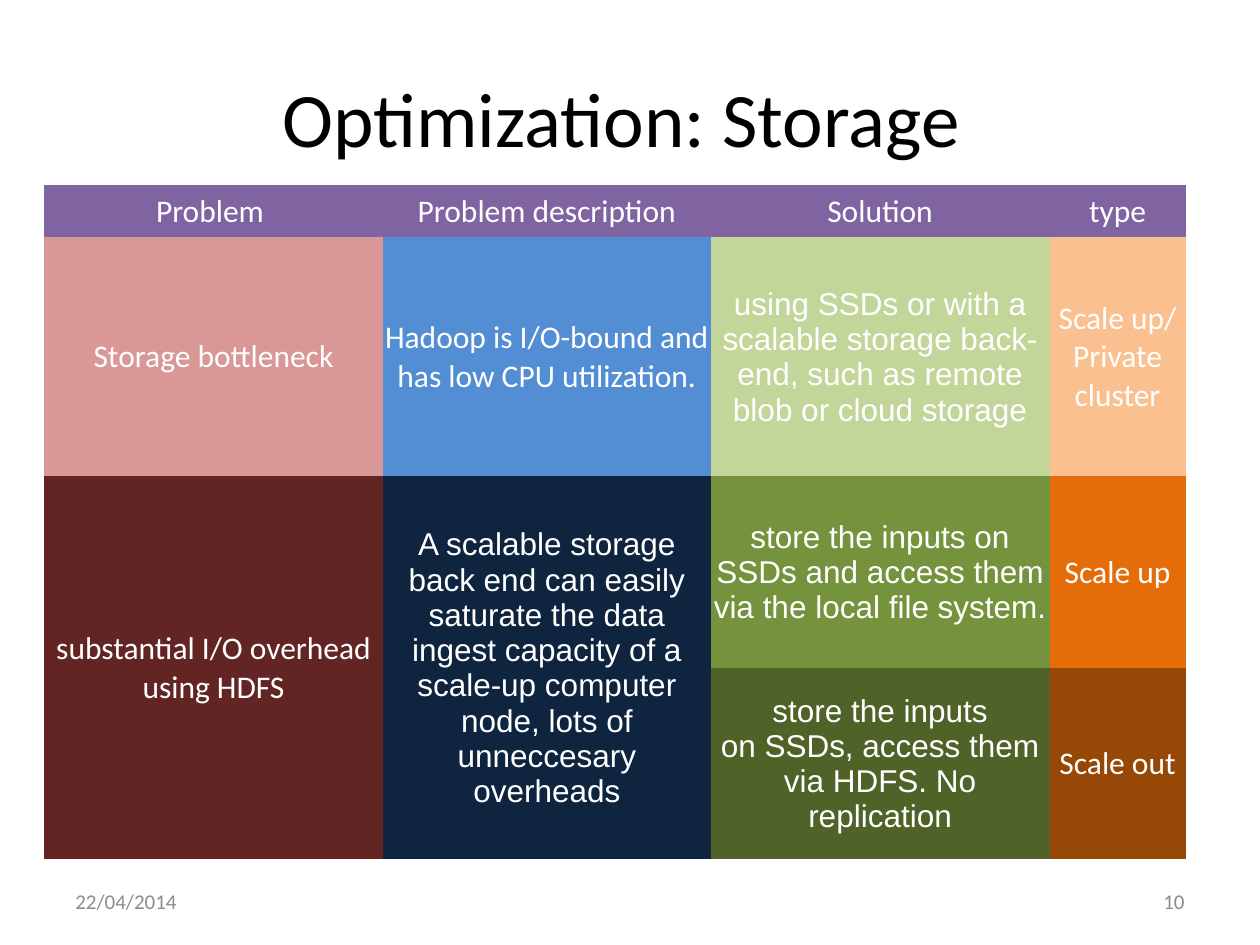
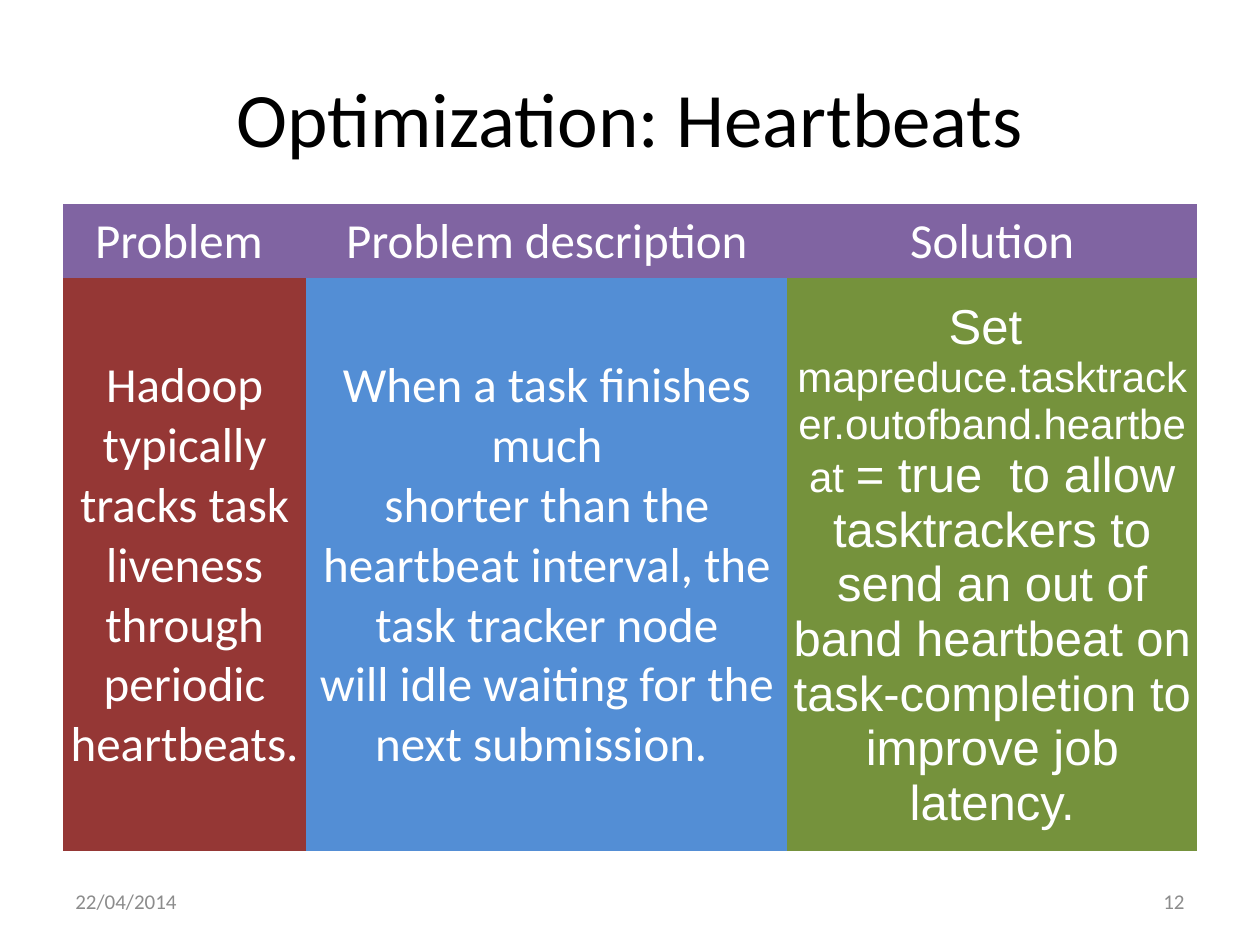
"""Build two slides of tables about Hadoop optimization."""
from dataclasses import dataclass

from pptx import Presentation
from pptx.dml.color import RGBColor
from pptx.enum.text import MSO_ANCHOR, PP_ALIGN
from pptx.util import Inches, Pt

BLACK = RGBColor(0x00, 0x00, 0x00)
WHITE = RGBColor(0xFF, 0xFF, 0xFF)
GREY = RGBColor(0x8C, 0x8C, 0x8C)
PURPLE = RGBColor(0x80, 0x64, 0xA2)
PALE_RED = RGBColor(0xD9, 0x97, 0x95)
RED = RGBColor(0x95, 0x37, 0x35)
DARK_RED = RGBColor(0x63, 0x25, 0x23)
BLUE = RGBColor(0x53, 0x8E, 0xD5)
NAVY = RGBColor(0x0F, 0x25, 0x3F)
PALE_GREEN = RGBColor(0xC2, 0xD6, 0x9A)
GREEN = RGBColor(0x75, 0x92, 0x3C)
DARK_GREEN = RGBColor(0x4F, 0x62, 0x28)
PALE_ORANGE = RGBColor(0xFA, 0xC0, 0x90)
ORANGE = RGBColor(0xE4, 0x6D, 0x0A)
BROWN = RGBColor(0x97, 0x48, 0x06)

BODY_FONT = "Calibri"
ALTERNATE_FONT = "Arial"
PLAIN_TABLE_STYLE = "{2D5ABB26-0587-4C30-8999-92F81FD0307C}"
TITLE_ONLY = 5
DATE = "22/04/2014"


@dataclass
class Entry:
    """Content and look of one table cell; spans are (text, size) pairs."""
    text: str
    fill: RGBColor
    font: str = BODY_FONT
    row_span: int = 1
    spans: tuple = ()


def header(*labels):
    """Return a row of header entries."""
    return [Entry(label, PURPLE) for label in labels]


STORAGE_ROWS = [
    header("Problem ", "Problem description", "Solution", "type"),
    [
        Entry("Storage bottleneck", PALE_RED),
        Entry("Hadoop is I/O-bound and has low CPU utilization.", BLUE),
        Entry("using SSDs or with a scalable storage back-end, such as "
              "remote blob or cloud storage", PALE_GREEN, ALTERNATE_FONT),
        Entry("Scale up/\nPrivate cluster", PALE_ORANGE),
    ],
    [
        Entry("substantial I/O overhead using HDFS", DARK_RED, row_span=2),
        Entry("A scalable storage back end can easily saturate the data ingest "
              "capacity of a scale-up computer node, lots of unneccesary overheads",
              NAVY, ALTERNATE_FONT, row_span=2),
        Entry("store the inputs on SSDs and access them via the local ﬁle system.",
              GREEN, ALTERNATE_FONT),
        Entry("Scale up", ORANGE),
    ],
    [
        None,
        None,
        Entry("store the inputs\von SSDs, access them via HDFS. No replication",
              DARK_GREEN, ALTERNATE_FONT),
        Entry("Scale out", BROWN),
    ],
]

HEARTBEAT_ROWS = [
    header("Problem ", "Problem description", "Solution"),
    [
        Entry("Hadoop typically tracks task liveness\vthrough periodic heartbeats.", RED),
        Entry("When a task ﬁnishes much\vshorter than the heartbeat interval, "
              "the task tracker node\vwill idle waiting for the next submission. ", BLUE),
        Entry("", GREEN, ALTERNATE_FONT, spans=(
            ("Set  ", 28),
            ("mapreduce.tasktracker.outofband.heartbeat ", 24),
            ("= true  to allow tasktrackers to send an out of band heartbeat on "
             "task-completion to improve job latency.", 28),
        )),
    ],
]


def format_paragraph(para, size, color, align, font=BODY_FONT):
    """Set alignment and font of a paragraph."""
    para.alignment = align
    para.font.name = font
    para.font.size = Pt(size)
    para.font.bold = False
    para.font.color.rgb = color


def add_title(page, text):
    """Place and format the title placeholder."""
    title = page.shapes.title
    title.left, title.top = Inches(0.5), Inches(0.3)
    title.width, title.height = Inches(9), Inches(1.25)
    title.text_frame.text = text
    title.text_frame.vertical_anchor = MSO_ANCHOR.MIDDLE
    format_paragraph(title.text_frame.paragraphs[0], 44, BLACK, PP_ALIGN.CENTER)


def add_footer_text(page, left, text, align):
    """Add one small grey text at the foot of the page."""
    box = page.shapes.add_textbox(Inches(left), Inches(6.95), Inches(2.33), Inches(0.4))
    frame = box.text_frame
    frame.word_wrap = True
    frame.vertical_anchor = MSO_ANCHOR.MIDDLE
    frame.text = text
    format_paragraph(frame.paragraphs[0], 12, GREY, align)


def fill_cell(cell, entry, size):
    """Write an entry into a table cell."""
    cell.fill.solid()
    cell.fill.fore_color.rgb = entry.fill
    cell.vertical_anchor = MSO_ANCHOR.MIDDLE
    cell.margin_left = cell.margin_right = cell.margin_top = Inches(0.01)
    cell.margin_bottom = 0
    frame = cell.text_frame
    frame.text = entry.text
    for text, span_size in entry.spans:
        span = frame.paragraphs[0].add_run()
        span.text = text
        span.font.size = Pt(span_size)
    for para in frame.paragraphs:
        format_paragraph(para, size, WHITE, PP_ALIGN.CENTER, entry.font)


def add_grid(page, left, top, widths, heights, rows, size):
    """Add a table of coloured cells."""
    table = page.shapes.add_table(
        len(heights), len(widths), Inches(left), Inches(top),
        Inches(sum(widths)), Inches(sum(heights))).table
    table.first_row = table.horz_banding = False
    table._tbl.tblPr[0].text = PLAIN_TABLE_STYLE
    for column, width in zip(table.columns, widths):
        column.width = Inches(width)
    for row, height in zip(table.rows, heights):
        row.height = Inches(height)
    for row_index, entries in enumerate(rows):
        for column_index, entry in enumerate(entries):
            if entry is None:
                continue
            cell = table.cell(row_index, column_index)
            if entry.row_span > 1:
                cell.merge(table.cell(row_index + entry.row_span - 1, column_index))
            fill_cell(cell, entry, size)


def add_page(deck, title, number):
    """Add a page with its title, date and number."""
    page = deck.slides.add_slide(deck.slide_layouts[TITLE_ONLY])
    add_title(page, title)
    add_footer_text(page, 0.5, DATE, PP_ALIGN.LEFT)
    add_footer_text(page, 7.17, number, PP_ALIGN.RIGHT)
    return page


def main():
    """Build and save the deck."""
    deck = Presentation()
    deck.slide_width, deck.slide_height = Inches(10), Inches(7.5)

    storage = add_page(deck, "Optimization: Storage ", "10")
    add_grid(storage, 0.35, 1.47, [2.69, 2.6, 2.69, 1.08],
             [0.41, 1.9, 1.52, 1.52], STORAGE_ROWS, 18)

    heartbeats = add_page(deck, "Optimization: Heartbeats", "12")
    add_grid(heartbeats, 0.5, 1.62, [1.93, 3.82, 3.25],
             [0.59, 4.45], HEARTBEAT_ROWS, 28)

    deck.save("out.pptx")


if __name__ == "__main__":
    main()
